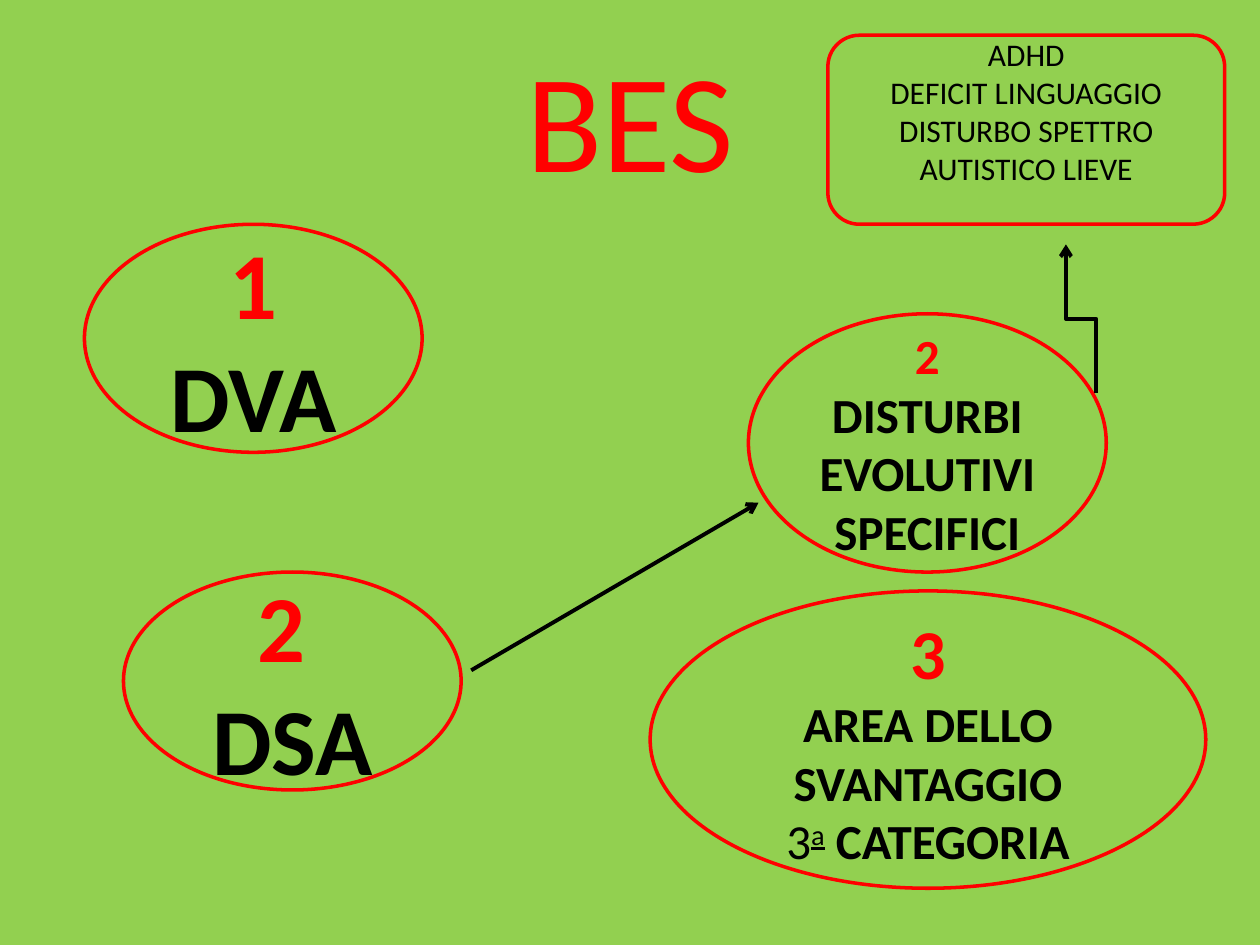
"""Build the BES overview slide with its categories and connecting arrows."""
from lxml import etree
from pptx import Presentation
from pptx.dml.color import RGBColor
from pptx.enum import shapes, text
from pptx.oxml.ns import qn
from pptx.util import Inches, Pt

GREEN = RGBColor(0x92, 0xD0, 0x50)
RED = RGBColor(0xFF, 0x00, 0x00)
BLACK = RGBColor(0x00, 0x00, 0x00)
OVAL = shapes.MSO_SHAPE.OVAL
ROUNDED = shapes.MSO_SHAPE.ROUNDED_RECTANGLE


def add_run(paragraph, wording, size, color, **formats):
    run = paragraph.add_run()
    run.text = wording
    settings = {"name": "Calibri", "size": Pt(size), **formats}
    for name, value in settings.items():
        setattr(run.font, name, value)
    run.font.color.rgb = color
    return run


def add_arrow(kind, *ends):
    connector = slide.shapes.add_connector(kind, *map(Inches, ends))
    connector.line.color.rgb = BLACK
    connector.line.width = Pt(2.25)
    line = connector.line._get_or_add_ln()
    etree.SubElement(line, qn("a:tailEnd"), type="arrow")
    etree.SubElement(connector._element.spPr, qn("a:effectLst"))
    return connector


presentation = Presentation()
presentation.slide_width = Inches(10)
presentation.slide_height = Inches(7.5)
slide = presentation.slides.add_slide(presentation.slide_layouts[5])
slide.background.fill.solid()
slide.background.fill.fore_color.rgb = GREEN

title = slide.shapes.title
placement = {"left": 0.5, "top": 0.3, "width": 9, "height": 1.25}
for name, value in placement.items():
    setattr(title, name, Inches(value))
title.text_frame.vertical_anchor = text.MSO_ANCHOR.MIDDLE
title_paragraph = title.text_frame.paragraphs[0]
title_paragraph.alignment = text.PP_ALIGN.CENTER
add_run(title_paragraph, "BES", 80, RED)

boxes = [
    (OVAL, (0.98, 4.54, 2.68, 1.73), True,
     [("2 ", 54, RED), ("DSA", 54, BLACK)]),
    (OVAL, (5.94, 2.49, 2.84, 2.05), True,
     [("2", 28, RED), ("DISTURBI EVOLUTIVI SPECIFICI", 28, BLACK)]),
    (OVAL, (5.16, 4.69, 4.41, 2.36), True,
     [("3", 40, RED), ("AREA DELLO SVANTAGGIO", 28, BLACK)]),
    (OVAL, (0.67, 1.78, 2.68, 1.81), True,
     [("1", 54, RED), ("DVA", 54, BLACK)]),
    (ROUNDED, (6.57, 0.28, 3.15, 1.5), False,
     [("ADHD", 18, BLACK), ("DEFICIT LINGUAGGIO", 18, BLACK),
      ("DISTURBO SPETTRO AUTISTICO LIEVE", 18, BLACK)]),
]
frames = []
for kind, position, bold, lines in boxes:
    shape = slide.shapes.add_shape(kind, *map(Inches, position))
    shape.shadow.inherit = False
    shape.fill.solid()
    shape.fill.fore_color.rgb = GREEN
    shape.line.color.rgb = RED
    shape.line.width = Pt(2)
    frame = shape.text_frame
    frame.word_wrap = True
    frame.vertical_anchor = text.MSO_ANCHOR.MIDDLE
    for index, (wording, size, color) in enumerate(lines):
        paragraph = frame.add_paragraph() if index else frame.paragraphs[0]
        paragraph.alignment = text.PP_ALIGN.CENTER
        add_run(paragraph, wording, size, color, bold=bold)
    frames.append(frame)

dsa, disorders, disadvantage, dva, examples = frames
examples.margin_bottom = Inches(0.35)

category = disadvantage.add_paragraph()
category.alignment = text.PP_ALIGN.CENTER
add_run(category, "3", 28, BLACK, bold=False)
ordinal = add_run(category, "a", 28, BLACK, bold=False, underline=True)
ordinal.font._element.set("baseline", "30000")
add_run(category, " CATEGORIA", 28, BLACK, bold=True)

add_arrow(shapes.MSO_CONNECTOR.STRAIGHT, 3.74, 5.32, 6.02, 3.99)
elbow = add_arrow(shapes.MSO_CONNECTOR.ELBOW, 7.99, 2.65, 9.17, 2.41)
elbow._element.spPr.find(qn("a:xfrm")).set("rot", str(270 * 60000))

presentation.save("out.pptx")
